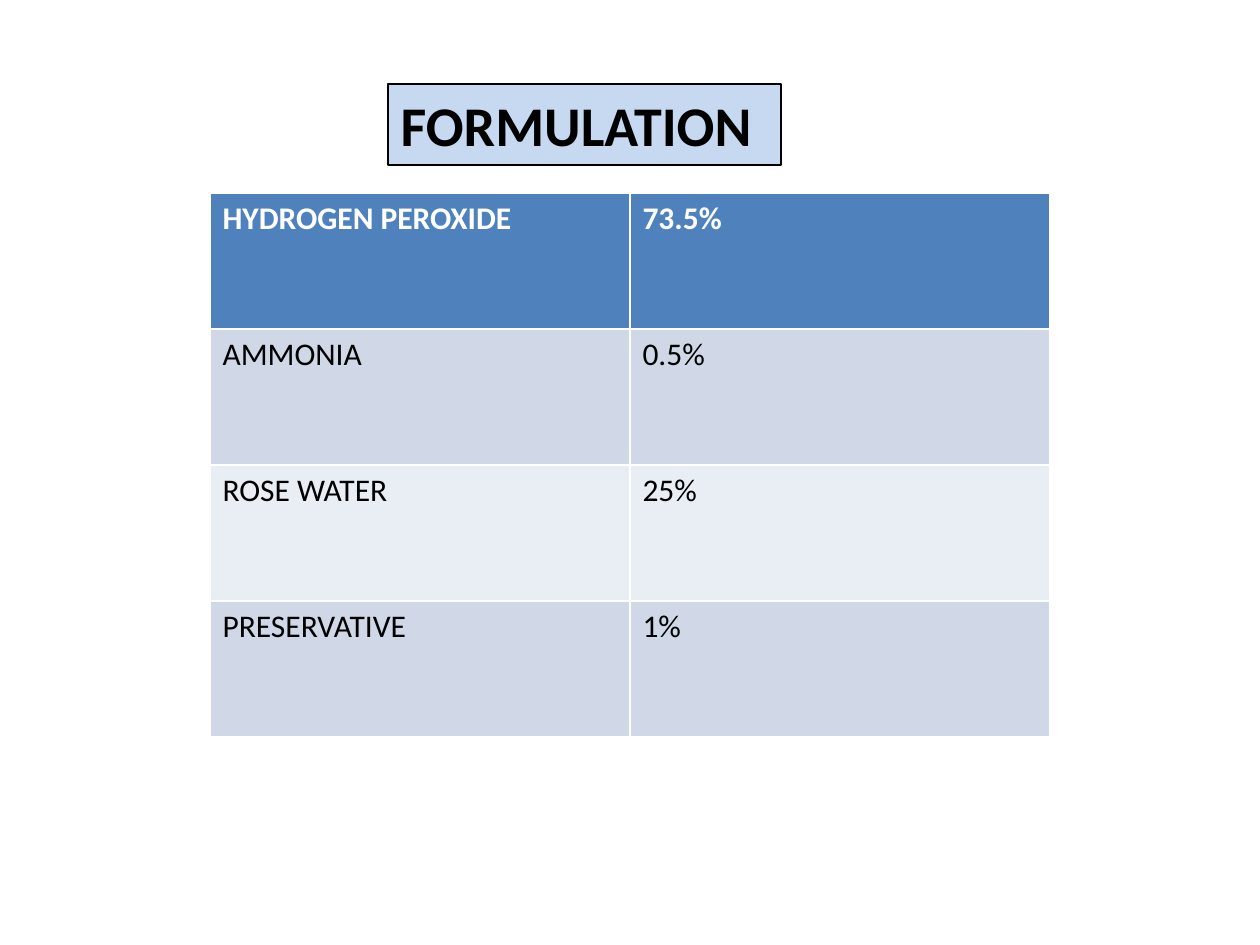
from pptx import Presentation
from pptx.dml.color import RGBColor
from pptx.enum.text import MSO_ANCHOR, MSO_AUTO_SIZE, PP_ALIGN
from pptx.util import Emu, Inches, Pt

PX = Inches(1) // 126
FONT = "Calibri"
BLACK = RGBColor(0x00, 0x00, 0x00)
WHITE = RGBColor(0xFF, 0xFF, 0xFF)
TITLE_FILL = RGBColor(0xC6, 0xD9, 0xF1)
HEADER_FILL = RGBColor(0x4F, 0x81, 0xBD)
BAND_FILLS = (RGBColor(0xE9, 0xED, 0xF4), RGBColor(0xD0, 0xD8, 0xE8))

INGREDIENTS = [
    ("HYDROGEN PEROXIDE", "73.5%"),
    ("AMMONIA", "0.5%"),
    ("ROSE WATER", "25%"),
    ("PRESERVATIVE", "1%"),
]


def px(length):
    return Emu(length * PX)


def write_text(frame, text, size=18, color=BLACK, bold=False):
    para = frame.paragraphs[0]
    para.alignment = PP_ALIGN.LEFT
    span = para.add_run()
    span.text = text
    span.font.name = FONT
    span.font.size = Pt(size)
    span.font.bold = bold
    span.font.color.rgb = color


def fill_solid(target, color):
    target.fill.solid()
    target.fill.fore_color.rgb = color


def add_title(page, text, left, top, width, height):
    box = page.shapes.title
    box.left, box.top, box.width, box.height = map(px, (left, top, width, height))
    fill_solid(box, TITLE_FILL)
    box.line.color.rgb = BLACK
    box.line.width = Pt(0.75)
    frame = box.text_frame
    frame.word_wrap = True
    frame.auto_size = MSO_AUTO_SIZE.NONE
    frame.vertical_anchor = MSO_ANCHOR.MIDDLE
    write_text(frame, text, size=32, bold=True)


def add_ingredient_table(page, rows, left, top, column_width, row_height):
    """Add a table whose white rules come from the default table style."""
    columns = len(rows[0])
    table = page.shapes.add_table(
        len(rows), columns, px(left), px(top),
        px(column_width * columns), px(row_height * len(rows)),
    ).table
    for row_index, values in enumerate(rows):
        header = row_index == 0
        for column_index, value in enumerate(values):
            cell = table.cell(row_index, column_index)
            fill_solid(cell, HEADER_FILL if header else BAND_FILLS[row_index % 2])
            write_text(cell.text_frame, value, color=WHITE if header else BLACK, bold=header)


def main():
    deck = Presentation()
    deck.slide_width, deck.slide_height = px(1260), px(945)
    page = deck.slides.add_slide(deck.slide_layouts.get_by_name("Title Only"))
    add_title(page, "FORMULATION", left=388, top=84, width=393, height=81)
    add_ingredient_table(page, INGREDIENTS, left=210, top=193, column_width=420, row_height=136)
    deck.save("out.pptx")


if __name__ == "__main__":
    main()
